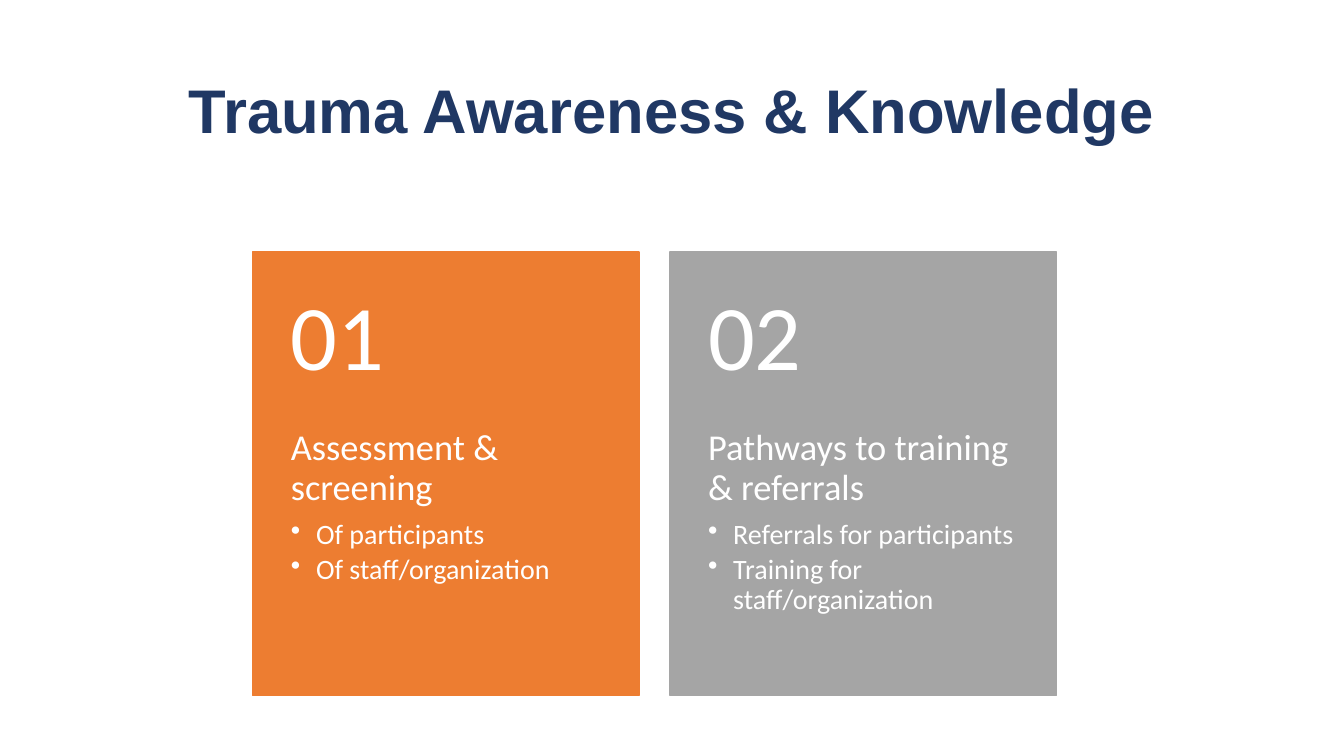
from lxml.etree import SubElement
from pptx import Presentation
from pptx.dml.color import RGBColor
from pptx.enum.shapes import MSO_SHAPE
from pptx.enum.text import MSO_ANCHOR, MSO_AUTO_SIZE, PP_ALIGN
from pptx.oxml.ns import qn
from pptx.util import Pt

NAVY = RGBColor(0x20, 0x38, 0x64)
ORANGE = RGBColor(0xED, 0x7D, 0x31)
GRAY = RGBColor(0xA5, 0xA5, 0xA5)
WHITE = RGBColor(0xFF, 0xFF, 0xFF)

CARDS = [
    ("01", "Assessment & screening",
     ["Of participants", "Of staff/organization"], ORANGE),
    ("02", "Pathways to training & referrals",
     ["Referrals for participants", "Training for staff/organization"], GRAY),
]


def write(frame, text, *, size, color=WHITE, font="Calibri", bold=False,
          align=PP_ALIGN.LEFT, after=0, bullet=False):
    """Write text as the next paragraph of a frame."""
    paragraph = frame.paragraphs[0]
    if paragraph.runs:
        paragraph = frame.add_paragraph()
    if bullet:
        paragraph.level = 1
        properties = paragraph._p.get_or_add_pPr()
        properties.set("marL", str(Pt(18)))
        properties.set("indent", str(-Pt(18)))
        SubElement(properties, qn("a:buChar"), char="•")
    paragraph.alignment = align
    paragraph.line_spacing = 0.9
    paragraph.space_before = Pt(0)
    paragraph.space_after = Pt(after)
    run = paragraph.add_run()
    run.text = text
    run.font.name = font
    run.font.size = Pt(size)
    run.font.bold = bold
    run.font.color.rgb = color


def add_title(slide, left, top, width, height):
    """Place the centred slide title in its box."""
    title = slide.shapes.title
    title.left, title.top = Pt(left), Pt(top)
    title.width, title.height = Pt(width), Pt(height)
    frame = title.text_frame
    frame.vertical_anchor = MSO_ANCHOR.MIDDLE
    frame.auto_size = MSO_AUTO_SIZE.NONE
    write(frame, "Trauma Awareness & Knowledge", size=44, color=NAVY,
          font="Arial", bold=True, align=PP_ALIGN.CENTER)


def add_frame(slide, left, top, width, height, *, anchor, inset_top, inset_bottom):
    """Add a wrapping text box and return its frame."""
    box = slide.shapes.add_textbox(Pt(left), Pt(top), Pt(width), Pt(height))
    frame = box.text_frame
    frame.word_wrap = True
    frame.vertical_anchor = anchor
    frame.margin_left = frame.margin_right = Pt(27.25)
    frame.margin_top, frame.margin_bottom = Pt(inset_top), Pt(inset_bottom)
    return frame


def add_card(slide, left, top, width, height, number, heading, points, color):
    """Draw one numbered card, its number in the top 40 percent."""
    panel = slide.shapes.add_shape(
        MSO_SHAPE.RECTANGLE, Pt(left), Pt(top), Pt(width), Pt(height))
    panel.shadow.inherit = False
    panel.fill.solid()
    panel.fill.fore_color.rgb = color
    panel.line.color.rgb = color
    panel.line.width = Pt(1)

    number_height = height * 0.4
    number_frame = add_frame(slide, left, top, width, number_height,
                             anchor=MSO_ANCHOR.MIDDLE, inset_top=13, inset_bottom=13)
    write(number_frame, number, size=66)

    body = add_frame(slide, left, top + number_height, width, height - number_height,
                     anchor=MSO_ANCHOR.TOP, inset_top=0, inset_bottom=26)
    write(body, heading, size=26, after=9)
    for point in points:
        write(body, point, size=20, after=3, bullet=True)


def add_cards(slide, left, top, width, height, gap):
    """Divide the box into equal cards."""
    card_width = (width - gap * (len(CARDS) - 1)) / len(CARDS)
    for index, card in enumerate(CARDS):
        add_card(slide, left + index * (card_width + gap), top,
                 card_width, height, *card)


def main():
    """Build and save the slide."""
    deck = Presentation()
    deck.slide_width, deck.slide_height = Pt(960), Pt(540)
    slide = deck.slides.add_slide(deck.slide_layouts[5])
    add_title(slide, 66, 28.75, 828, 104.4)
    add_cards(slide, 180.5, 180, 574, 316.8, gap=22)
    deck.save("out.pptx")


if __name__ == "__main__":
    main()
